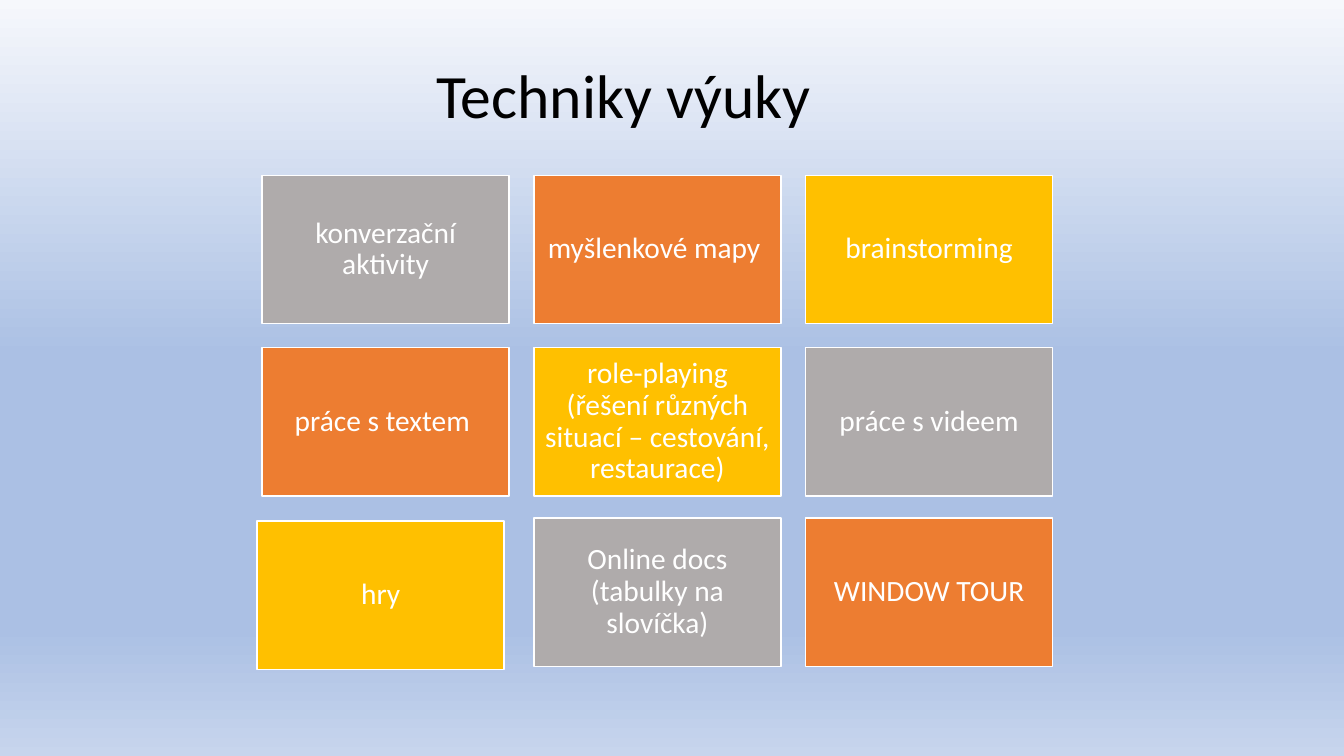
from lxml.etree import SubElement
from pptx import Presentation
from pptx.dml.color import RGBColor
from pptx.enum.shapes import MSO_SHAPE
from pptx.enum.text import MSO_ANCHOR, PP_ALIGN
from pptx.oxml.ns import qn
from pptx.util import Inches, Pt

TITLE = "Techniky výuky"
# Each tile: text, colour name, offset from its grid place in inches
TILES = [
    [("konverzační aktivity", "gray", (0, 0)),
     ("myšlenkové mapy ", "orange", (0, 0)),
     ("brainstorming", "gold", (0, 0))],
    [("práce s textem ", "orange", (0, 0)),
     ("role-playing (řešení různých situací – cestování, restaurace)", "gold", (0, 0)),
     ("práce s videem", "gray", (0, 0))],
    [("hry", "gold", (-0.05, 0.01)),
     ("Online docs (tabulky na slovíčka)", "gray", (0, -0.02)),
     ("WINDOW TOUR", "orange", (0, -0.02))],
]
THEME = {
    "font": "Calibri", "title_size": 44, "tile_size": 21,
    "title": "000000", "white": "FFFFFF",
    "gray": "AFABAB", "orange": "ED7D31", "gold": "FFC000",
    "background": [(0, "F6F8FC"), (47, "ABC0E4"), (83, "ABC0E4"), (100, "C7D5ED")],
}
LEFT, TOP = 2.6, 1.74
TILE_W, TILE_H = 2.45, 1.47
GAP_X, GAP_Y = 0.245, 0.24
INSET = 0.09


def color(name):
    return RGBColor.from_string(THEME[name])


def paint_background(s):
    fill = s.background.fill
    fill.gradient()
    fill.gradient_angle = 270
    stops = s.element.find(".//" + qn("a:gsLst"))
    for stop in list(stops):
        stops.remove(stop)
    for percent, rgb in THEME["background"]:
        stop = SubElement(stops, qn("a:gs"), pos=str(percent * 1000))
        SubElement(stop, qn("a:srgbClr"), val=rgb)


def write(tf, text, size, color_name, align, anchor):
    tf.word_wrap = True
    tf.vertical_anchor = anchor
    p = tf.paragraphs[0]
    p.alignment = align
    p.line_spacing = 0.9
    r = p.add_run()
    r.text = text
    r.font.name = THEME["font"]
    r.font.size = Pt(THEME[size])
    r.font.color.rgb = color(color_name)


def add_tile(s, x, y, text, fill):
    sp = s.shapes.add_shape(MSO_SHAPE.RECTANGLE, Inches(x), Inches(y),
                            Inches(TILE_W), Inches(TILE_H))
    sp.shadow.inherit = False
    sp.fill.solid()
    sp.fill.fore_color.rgb = color(fill)
    sp.line.color.rgb = color("white")
    sp.line.width = Pt(1)
    tf = sp.text_frame
    tf.margin_left = tf.margin_right = Inches(INSET)
    tf.margin_top = tf.margin_bottom = Inches(INSET)
    write(tf, text, "tile_size", "white", PP_ALIGN.CENTER, MSO_ANCHOR.MIDDLE)


def main():
    prs = Presentation()
    prs.slide_width, prs.slide_height = Inches(13.33), Inches(7.5)
    s = prs.slides.add_slide(prs.slide_layouts[6])
    paint_background(s)

    title = s.shapes.add_textbox(Inches(4.23), Inches(0.36), Inches(5.76), Inches(1))
    write(title.text_frame, TITLE, "title_size", "title", PP_ALIGN.LEFT, MSO_ANCHOR.BOTTOM)

    for row, tiles in enumerate(TILES):
        for col, (text, fill, (dx, dy)) in enumerate(tiles):
            x = LEFT + col * (TILE_W + GAP_X) + dx
            y = TOP + row * (TILE_H + GAP_Y) + dy
            add_tile(s, x, y, text, fill)

    prs.save("out.pptx")


if __name__ == "__main__":
    main()
